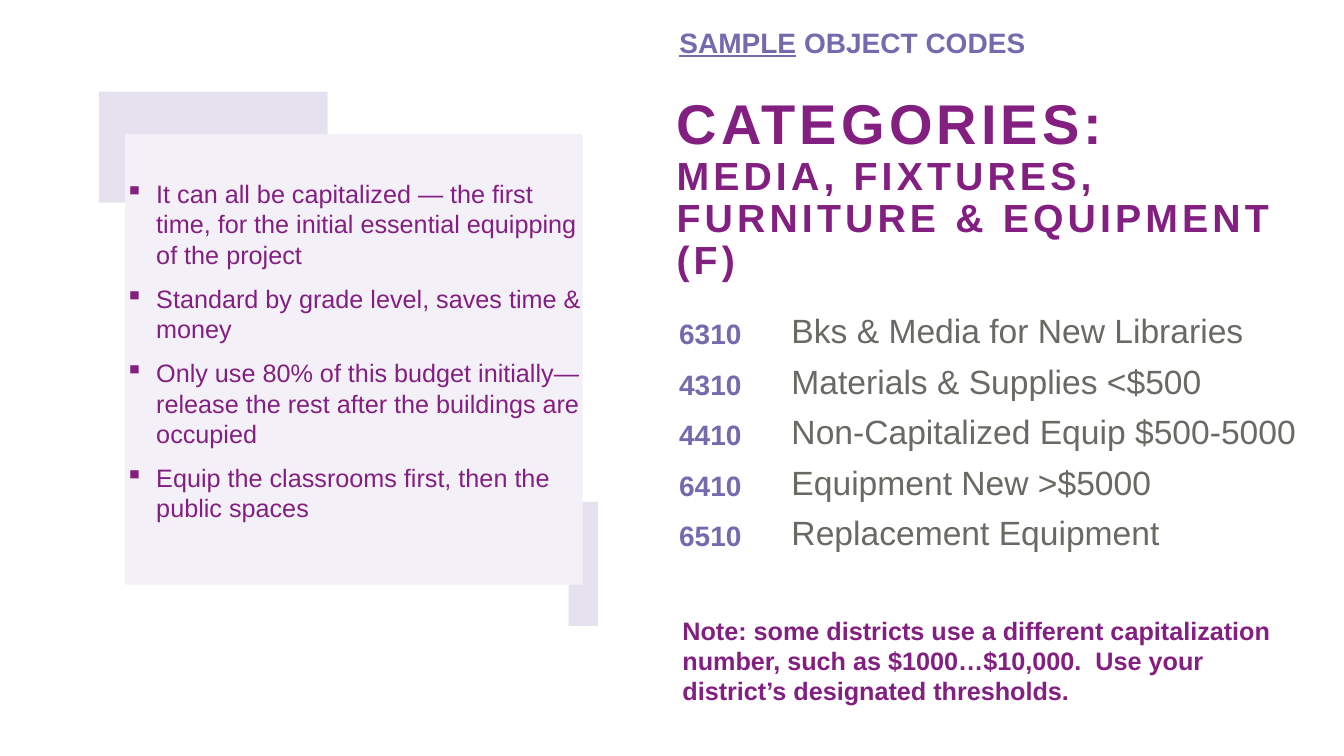
import pptx
import pptx.util
import pptx.dml.color
import pptx.enum.shapes
import pptx.enum.text
import pptx.oxml.ns
from lxml import etree

Pt, Inches = pptx.util.Pt, pptx.util.Inches
Align = pptx.enum.text.PP_ALIGN
Anchor = pptx.enum.text.MSO_ANCHOR
qn = pptx.oxml.ns.qn

HUES = {"plum": "841F82", "violet": "7769AE", "gray": "6B6963",
        "lilac": "C5B9D9", "pale": "F3F1F7"}
FONT = "Arial"
INDENT = Inches(0.31)

POINTS = [
    "It can all be capitalized — the first time, for the initial essential equipping of the project",
    "Standard by grade level, saves time & money",
    "Only use 80% of this budget initially— release the rest after the buildings are occupied",
    "Equip the classrooms first, then the public spaces",
]
CODES = [
    ("6310", "Bks & Media for New Libraries"),
    ("4310", "Materials & Supplies <$500"),
    ("4410", "Non-Capitalized Equip $500-5000"),
    ("6410", "Equipment New >$5000"),
    ("6510", "Replacement Equipment"),
]
NOTE = ("Note: some districts use a different capitalization number, such as "
        "$1000…$10,000.  Use your district’s designated thresholds.")


class Deck:
    """Holds the style and the slide; lengths are percent of its size."""

    def __init__(self):
        self.prs = pptx.Presentation()
        self.prs.slide_width = Inches(13.333)
        self.prs.slide_height = Inches(7.5)
        self.slide = self.prs.slides.add_slide(self.prs.slide_layouts[6])
        self.shapes = self.slide.shapes

    def col(self, n):
        return round(self.prs.slide_width * n / 100)

    def row(self, n):
        return round(self.prs.slide_height * n / 100)

    def area(self, x, y, w, h):
        return self.col(x), self.row(y), self.col(w), self.row(h)

    def color(self, name):
        return pptx.dml.color.RGBColor.from_string(HUES[name])

    def style(self, run, size, hue, bold=False):
        font = run.font
        font.name, font.size, font.bold = FONT, Pt(size), bold
        font.color.rgb = self.color(hue)

    def rect(self, place, hue, alpha=None):
        kind = pptx.enum.shapes.MSO_SHAPE.RECTANGLE
        box = self.shapes.add_shape(kind, *self.area(*place))
        box.shadow.inherit = False
        box.line.fill.background()
        box.fill.solid()
        box.fill.fore_color.rgb = self.color(hue)
        if alpha:
            tint = next(box.fill._xPr.iter(qn("a:srgbClr")))
            etree.SubElement(tint, qn("a:alpha")).set("val", str(alpha * 1000))
        return box

    def pad(self, frame, top=0):
        frame.margin_left = frame.margin_right = frame.margin_bottom = 0
        frame.margin_top = Inches(top)

    def text(self, place, words, size, hue):
        frame = self.shapes.add_textbox(*self.area(*place)).text_frame
        frame.word_wrap = True
        para = frame.paragraphs[0]
        for part in words:
            run = para.add_run()
            run.text = part
            self.style(run, size, hue, True)
        return para

    def title(self, place, lines, sizes, hue):
        frame = self.shapes.add_textbox(*self.area(*place)).text_frame
        frame.word_wrap = True
        self.pad(frame)
        para = frame.paragraphs[0]
        para.text = "\v".join(lines)
        para.line_spacing = 0.9
        for run, size in zip(para.runs, sizes):
            self.style(run, size, hue, True)
            run.font._element.set("spc", "300")

    def bullets(self, box, items, size, hue):
        frame = box.text_frame
        frame.word_wrap = True
        frame.vertical_anchor = Anchor.TOP
        self.pad(frame, 0.44)
        frame.text = "\n".join(items)
        for i, para in enumerate(frame.paragraphs):
            props = para._p.get_or_add_pPr()
            props.set("marL", str(INDENT))
            props.set("indent", str(-INDENT))
            etree.SubElement(props, qn("a:buChar")).set("char", "▪")
            para.alignment = Align.LEFT
            para.space_before = Pt(10 if i else 0)
            self.style(para.runs[0], size, hue)

    def table(self, x, y, widths, high, rows, looks):
        place = self.area(x, y, sum(widths), high * len(rows))
        grid = self.shapes.add_table(len(rows), len(widths), *place).table
        grid.first_row = grid.horz_banding = False
        for column, width in zip(grid.columns, widths):
            column.width = self.col(width)
        for r, words in enumerate(rows):
            for c, (word, (align, *look)) in enumerate(zip(words, looks)):
                cell = grid.cell(r, c)
                cell.fill.background()
                cell.vertical_anchor = Anchor.BOTTOM
                cell.margin_left = cell.margin_right = Inches(0.13)
                cell.margin_top = cell.margin_bottom = Inches(0.05)
                cell.text_frame.text = word
                para = cell.text_frame.paragraphs[0]
                para.alignment = align
                self.style(para.runs[0], *look)


def main():
    deck = Deck()

    # Accent blocks behind the panel
    deck.rect((7.35, 12.13, 17.03, 14.67), "lilac", 42)
    deck.rect((42.31, 66.4, 2.18, 16.4), "lilac", 42)

    # Title
    deck.title((50.34, 12.67, 47.71, 10.8),
               ["CATEGORIES:", "MEDIA, FIXTURES,", "FURNITURE & EQUIPMENT (F)"],
               [40, 28, 28], "plum")

    # Panel with bullets
    panel = deck.rect((9.3, 17.73, 34.06, 59.6), "pale")
    deck.bullets(panel, POINTS, 18, "plum")

    # Label above the title
    label = deck.text((49.81, 2.67, 37.73, 5.87),
                      ["SAMPLE", " OBJECT CODES"], 20, "violet")
    label.runs[0].font.underline = True

    # Object codes
    deck.table(47.79, 40.4, [10.13, 45], 6.67, CODES,
               [(Align.CENTER, 20, "violet", True), (Align.LEFT, 24, "gray")])

    # Closing note
    deck.text((50.04, 80.67, 47.94, 13.47), [NOTE], 18, "plum")

    deck.prs.save("out.pptx")


if __name__ == "__main__":
    main()
